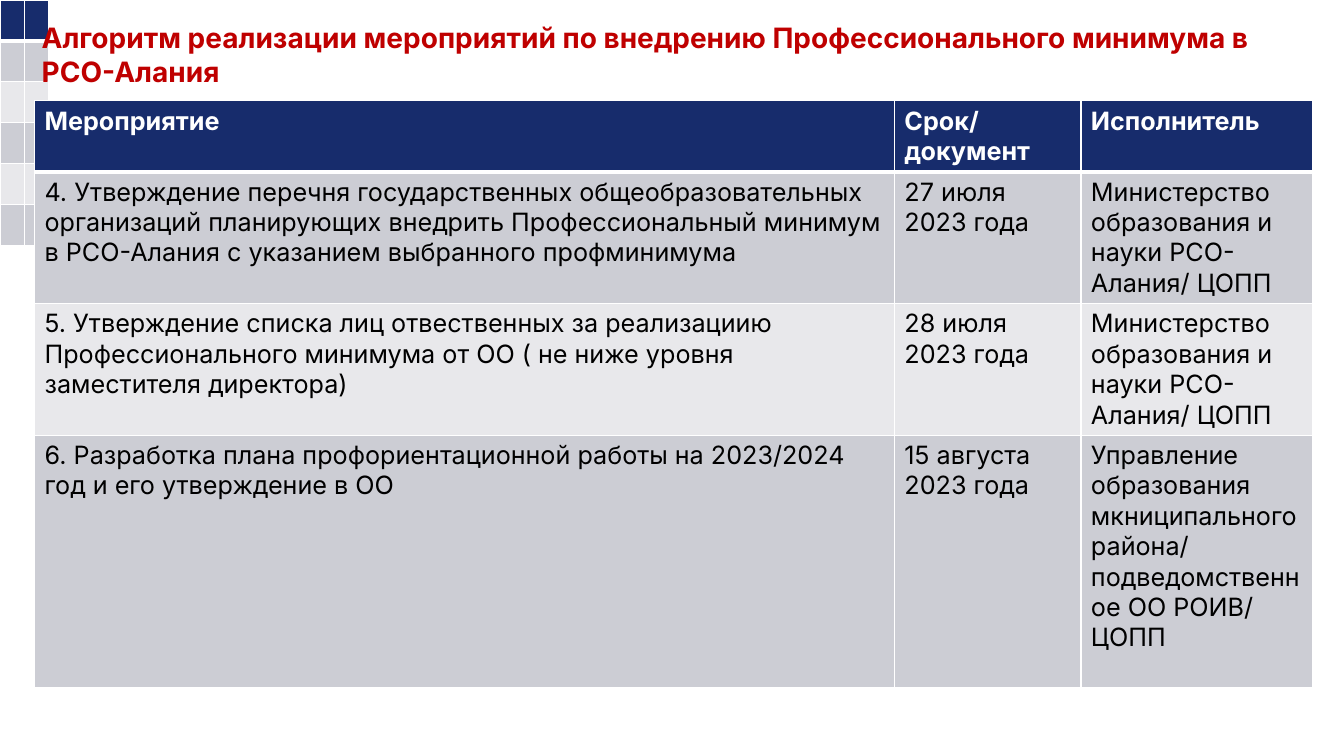
"""Builds a slide with a schedule table and a decorative corner grid."""
from dataclasses import dataclass

from lxml import etree
from pptx import Presentation
from pptx.dml.color import RGBColor
from pptx.enum.text import MSO_AUTO_SIZE
from pptx.oxml.ns import qn
from pptx.util import Cm, Pt

FIT_SHAPE = MSO_AUTO_SIZE.SHAPE_TO_FIT_TEXT


@dataclass(frozen=True)
class Theme:
    font: str = "Inter"
    navy: str = "172C6C"
    bands: tuple = ("CCCDD4", "E8E8EB")
    white: str = "FFFFFF"
    black: str = "000000"
    red: str = "BF0000"
    title_size: int = 20
    body_size: int = 18
    thin: int = 1
    thick: int = 3


THEME = Theme()
BLANK_LAYOUT = 6

ROWS = [
    ("Мероприятие", "Срок/документ", "Исполнитель"),
    ("4. Утверждение перечня государственных общеобразовательных организаций "
     "планирующих внедрить Профессиональный минимум в РСО-Алания с указанием "
     "выбранного профминимума",
     "27 июля 2023 года",
     "Министерство образования и науки РСО-Алания/ ЦОПП"),
    ("5. Утверждение списка лиц отвественных за реализациию Профессионального "
     "минимума от ОО ( не ниже уровня заместителя директора)",
     "28 июля 2023 года",
     "Министерство образования и науки РСО-Алания/ ЦОПП"),
    ("6. Разработка плана профориентационной работы на 2023/2024 год "
     "и его утверждение в ОО",
     "15 августа 2023 года",
     "Управление образования мкниципального района/ подведомственное "
     "ОО РОИВ/ ЦОПП"),
]


def add_text(tf, text, size, color, bold):
    r = tf.paragraphs[0].add_run()
    r.text = text
    r.font.color.rgb = RGBColor.from_string(color)
    for name, value in {"name": THEME.font, "size": Pt(size), "bold": bold}.items():
        setattr(r.font, name, value)


def add_grid(s, left, top, widths, heights, texts):
    table = s.shapes.add_table(len(heights), len(widths), Cm(left), Cm(top),
                               Cm(sum(widths)), Cm(sum(heights))).table
    for col, width in zip(table.columns, widths):
        col.width = Cm(width)
    for i, (row, height) in enumerate(zip(table.rows, heights)):
        row.height = Cm(height)
        header = i == 0
        edges = {"lnL": THEME.thin, "lnR": THEME.thin}
        if header:
            edges["lnT"] = THEME.thin
        edges["lnB"] = THEME.thick if header else THEME.thin
        for j, cell in enumerate(row.cells):
            tc_pr = cell._tc.get_or_add_tcPr()
            for edge, width in edges.items():
                ln = etree.SubElement(tc_pr, qn(f"a:{edge}"), w=str(Pt(width)))
                fill = etree.SubElement(ln, qn("a:solidFill"))
                etree.SubElement(fill, qn("a:srgbClr"), val=THEME.white)
            color = THEME.navy if header else THEME.bands[(i - 1) % 2]
            cell.fill.solid()
            cell.fill.fore_color.rgb = RGBColor.from_string(color)
            if texts:
                add_text(cell.text_frame, texts[i][j], THEME.body_size,
                         THEME.white if header else THEME.black, header)


prs = Presentation()
prs.slide_width, prs.slide_height = Cm(33.87), Cm(19.05)
s = prs.slides.add_slide(prs.slide_layouts[BLANK_LAYOUT])

add_grid(s, 0, 0, [0.6] * 2, [1.03] * 6, None)
add_grid(s, 0.87, 2.54, [21.67, 4.7, 5.84], [1.78, 3.3, 3.3, 6.35], ROWS)

title = s.shapes.add_textbox(Cm(0.8), Cm(0.4), Cm(32.28), Cm(1.96))
tf = title.text_frame
for name, value in {"word_wrap": True, "auto_size": FIT_SHAPE}.items():
    setattr(tf, name, value)
add_text(tf, "Алгоритм реализации мероприятий по внедрению Профессионального "
         "минимума в РСО-Алания", THEME.title_size, THEME.red, True)

prs.save("out.pptx")
